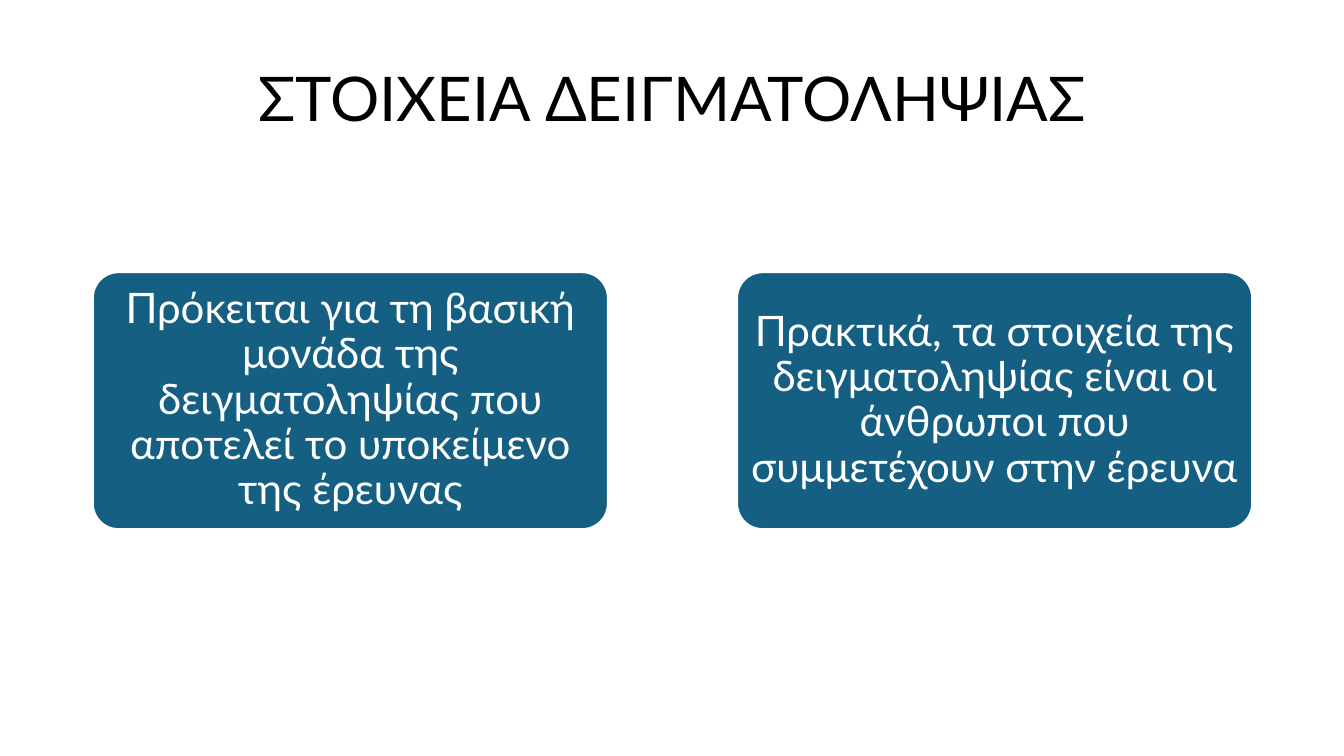
from pptx import Presentation
from pptx.dml.color import RGBColor
from pptx.enum.shapes import MSO_SHAPE as Shape
from pptx.enum.text import MSO_ANCHOR as Anchor, MSO_AUTO_SIZE as Fit, PP_ALIGN as Align
from pptx.util import Inches, Pt

BLACK = RGBColor(0x00, 0x00, 0x00)
WHITE = RGBColor(0xFF, 0xFF, 0xFF)
TEAL = RGBColor(0x15, 0x60, 0x82)
FONT = "Lato"
TITLE = "ΣΤΟΙΧΕΙΑ ΔΕΙΓΜΑΤΟΛΗΨΙΑΣ"
CARDS = [
    "Πρόκειται για τη βασική μονάδα της δειγματοληψίας που αποτελεί το υποκείμενο της έρευνας",
    "Πρακτικά, τα στοιχεία της δειγματοληψίας είναι οι άνθρωποι που συμμετέχουν στην έρευνα",
]


def place(shape, box):
    """Move a shape to a box given in inches."""
    shape.left, shape.top, shape.width, shape.height = map(Inches, box)


def write(frame, text, size, color):
    """Fill a text frame with one centred paragraph."""
    frame.text = text
    frame.word_wrap = True
    frame.auto_size = Fit.NONE
    frame.vertical_anchor = Anchor.MIDDLE
    para = frame.paragraphs[0]
    para.alignment = Align.CENTER
    para.line_spacing = 0.9
    para.font.name = FONT
    para.font.size = Pt(size)
    para.font.color.rgb = color


def add_title(slide, box):
    """Set the title placeholder in its box."""
    title = slide.shapes.title
    place(title, box)
    write(title.text_frame, TITLE, 44, BLACK)


def add_card(slide, box, text):
    """Draw a rounded card with centred text."""
    card = slide.shapes.add_shape(Shape.ROUNDED_RECTANGLE, *map(Inches, box))
    card.adjustments[0] = 0.1
    card.shadow.inherit = False
    card.fill.solid()
    card.fill.fore_color.rgb = TEAL
    card.line.color.rgb = WHITE
    card.line.width = Pt(1.5)
    frame = card.text_frame
    frame.margin_left = frame.margin_right = Inches(0.06)
    frame.margin_top = frame.margin_bottom = Inches(0.04)
    write(frame, text, 30, WHITE)


def add_cards(slide, box, gap):
    """Share a box among equal cards in a row."""
    left, top, width, height = box
    step = (width + gap) / len(CARDS)
    for i, text in enumerate(CARDS):
        add_card(slide, (left + i * step, top, step - gap, height), text)


def main():
    """Build and save the slide."""
    deck = Presentation()
    deck.slide_width, deck.slide_height = Inches(13.33), Inches(7.5)
    slide = deck.slides.add_slide(deck.slide_layouts[5])
    add_title(slide, (0.92, 0.4, 11.5, 1.21))
    add_cards(slide, (0.92, 2.7, 11.5, 2.55), 1.28)
    deck.save("out.pptx")


if __name__ == "__main__":
    main()
